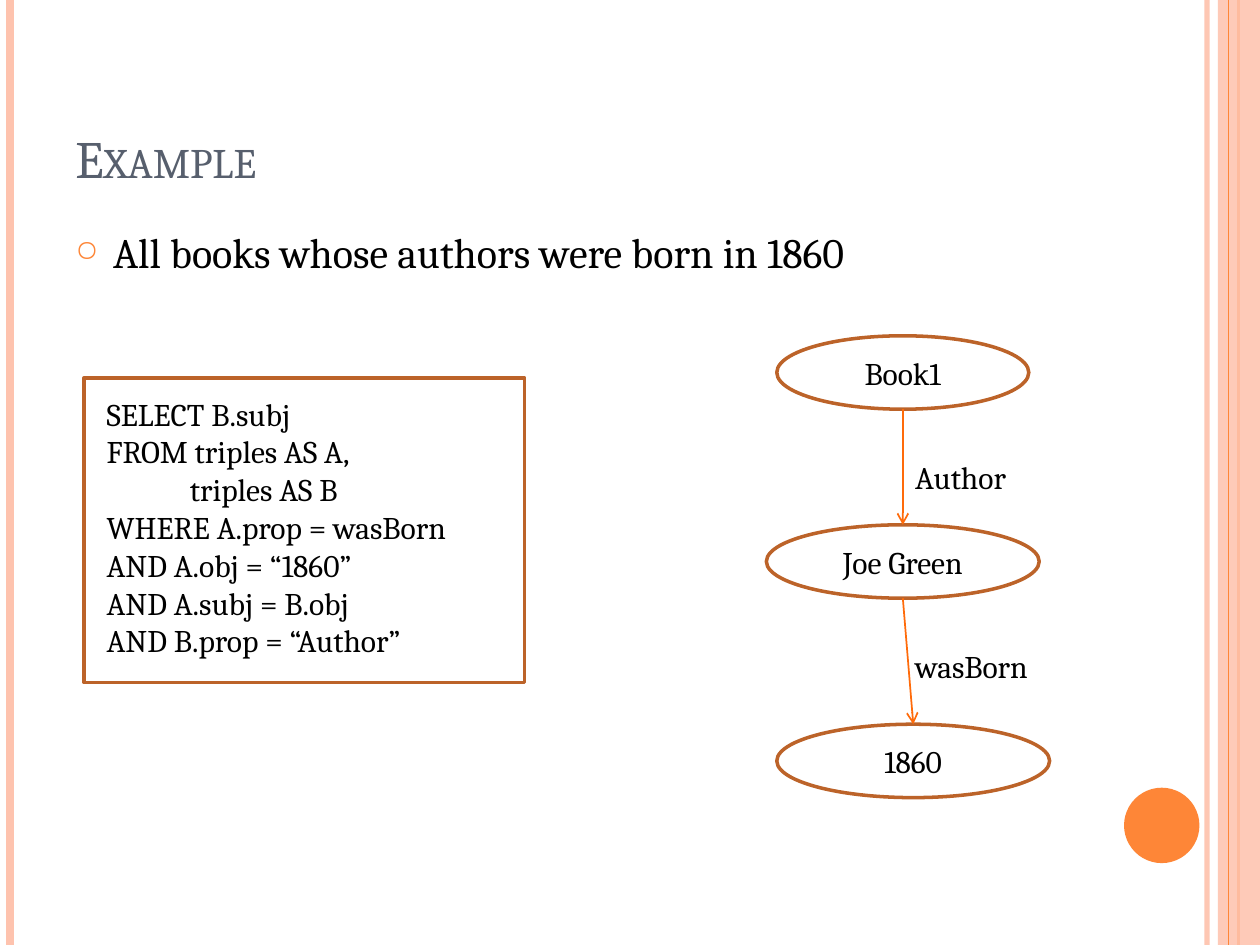
from dataclasses import dataclass

from lxml.etree import SubElement
from pptx import Presentation
from pptx.dml.color import RGBColor
from pptx.enum.shapes import MSO_CONNECTOR as CONN, MSO_SHAPE as SHAPE
from pptx.enum.text import MSO_ANCHOR as ANCHOR, PP_ALIGN as ALIGN
from pptx.oxml.ns import qn
from pptx.util import Cm, Pt


@dataclass(frozen=True)
class Theme:
    font: str = "Cambria"
    title: str = "575F6D"
    text: str = "000000"
    accent: str = "FE8637"
    pale: str = "FEC3AE"
    outline: str = "BC6329"
    arrow: str = "FF6B0A"
    title_size: int = 30
    body_size: int = 24
    label_size: int = 18


THEME = Theme()
WIDTH, HEIGHT = 25.4, 19.05
QUERY = [
    "SELECT B.subj",
    "FROM triples AS A,",
    "triples AS B",
    "WHERE A.prop = wasBorn",
    "AND A.obj = “1860”",
    "AND A.subj = B.obj",
    "AND B.prop = “Author”",
]


def rgb(color):
    return RGBColor.from_string(color)


def set_alpha(parent, percent):
    """Make the solid colour found under parent partly transparent."""
    color = next(parent.iter(qn("a:srgbClr")))
    SubElement(color, qn("a:alpha"), val=str(percent * 1000))


def write(tf, text, size=THEME.label_size, color=THEME.text, align=None,
          anchor=ANCHOR.TOP, wrap=True, small_caps=False):
    """Fill a text frame, one paragraph per line of text."""
    tf.word_wrap = wrap
    tf.vertical_anchor = anchor
    for i, line in enumerate(text.split("\n")):
        p = tf.add_paragraph() if i else tf.paragraphs[0]
        p.alignment = align
        r = p.add_run()
        r.text = line
        r.font.name, r.font.size = THEME.font, Pt(size)
        r.font.color.rgb = rgb(color)
        if small_caps:
            r.font._element.set("cap", "small")
    return tf


def indent(p, left, first=0):
    pPr = p._p.get_or_add_pPr()
    pPr.set("marL", str(Cm(left)))
    pPr.set("indent", str(Cm(first)))
    return pPr


def add_bullet(p, char="○", percent=70):
    p.space_before = Pt(6)
    pPr = indent(p, 0.76, -0.76)
    SubElement(SubElement(pPr, qn("a:buClr")), qn("a:srgbClr"), val=THEME.accent)
    SubElement(pPr, qn("a:buSzPct"), val=str(percent * 1000))
    SubElement(pPr, qn("a:buChar"), char=char)


def add_text(s, x, y, w, h, text, **fmt):
    return write(s.shapes.add_textbox(Cm(x), Cm(y), Cm(w), Cm(h)).text_frame, text, **fmt)


def add_shape(s, kind, x, y, w, h, fill=None, line=None):
    sp = s.shapes.add_shape(kind, Cm(x), Cm(y), Cm(w), Cm(h))
    sp.shadow.inherit = False
    if fill:
        sp.fill.solid()
        sp.fill.fore_color.rgb = rgb(fill)
    else:
        sp.fill.background()
    if line:
        sp.line.color.rgb = rgb(line)
        sp.line.width = Pt(2)
    else:
        sp.line.fill.background()
    return sp


def add_line(s, x1, y1, x2, y2, color, width):
    cx = s.shapes.add_connector(CONN.STRAIGHT, Cm(x1), Cm(y1), Cm(x2), Cm(y2))
    cx.line.color.rgb = rgb(color)
    cx.line.width = Pt(width)
    SubElement(cx._element.spPr, qn("a:effectLst"))
    return cx


def add_rule(s, x, color, width):
    return add_line(s, x, 0, x, HEIGHT, color, width)


def add_node(s, x, y, w, text):
    sp = add_shape(s, SHAPE.OVAL, x, y, w, 1.48, line=THEME.outline)
    write(sp.text_frame, text, align=ALIGN.CENTER, anchor=ANCHOR.MIDDLE)
    return sp


def add_arrow(s, source, target):
    """Point from the bottom of one node to the top of the next."""
    x = (source.left + source.width / 2) / Cm(1)
    y = (source.top + source.height) / Cm(1)
    cx = add_line(s, x, y, x, y, THEME.arrow, 1)
    cx.end_connect(target, 0)
    SubElement(cx.line._get_or_add_ln(), qn("a:tailEnd"), type="arrow")


def add_frame(s):
    set_alpha(add_rule(s, 24.33, THEME.pale, 3)._element, 93)
    add_rule(s, 0.21, THEME.pale, 4.5)
    add_rule(s, 24.97, THEME.accent, 1.5)
    band = add_shape(s, SHAPE.RECTANGLE, 24.55, 0, WIDTH - 24.55, HEIGHT, fill=THEME.pale)
    set_alpha(band._element.spPr, 87)
    add_rule(s, 24.77, THEME.accent, 0.75)
    add_shape(s, SHAPE.OVAL, 22.66, 15.88, 1.52, 1.52, fill=THEME.accent)


def add_query(s):
    add_shape(s, SHAPE.RECTANGLE, 1.69, 7.62, 8.89, 6.14, line=THEME.outline)
    tf = add_text(s, 1.9, 7.83, 8.68, 5.64, "\n".join(QUERY))
    indent(tf.paragraphs[2], 1.68)


def add_graph(s):
    nodes = [
        add_node(s, 15.66, 6.77, 5.08, "Book1"),
        add_node(s, 15.45, 10.58, 5.5, "Joe Green"),
        add_node(s, 15.66, 14.6, 5.5, "1860"),
    ]
    for source, target in zip(nodes, nodes[1:]):
        add_arrow(s, source, target)
    add_text(s, 18.2, 9.1, 2.62, 1.02, "Author", wrap=False)
    add_text(s, 18.2, 12.91, 3.12, 1.02, "wasBorn", wrap=False)


def main():
    prs = Presentation()
    prs.slide_width, prs.slide_height = Cm(WIDTH), Cm(HEIGHT)
    s = prs.slides.add_slide(prs.slide_layouts[6])
    add_frame(s)
    add_text(s, 1.27, 0.76, 20.75, 3.18, "Example", size=THEME.title_size,
             color=THEME.title, anchor=ANCHOR.BOTTOM, small_caps=True)
    body = add_text(s, 1.27, 4.45, 20.75, 13.54,
                    "All books whose authors were born in 1860", size=THEME.body_size)
    add_bullet(body.paragraphs[0])
    add_query(s)
    add_graph(s)
    prs.save("out.pptx")


if __name__ == "__main__":
    main()
